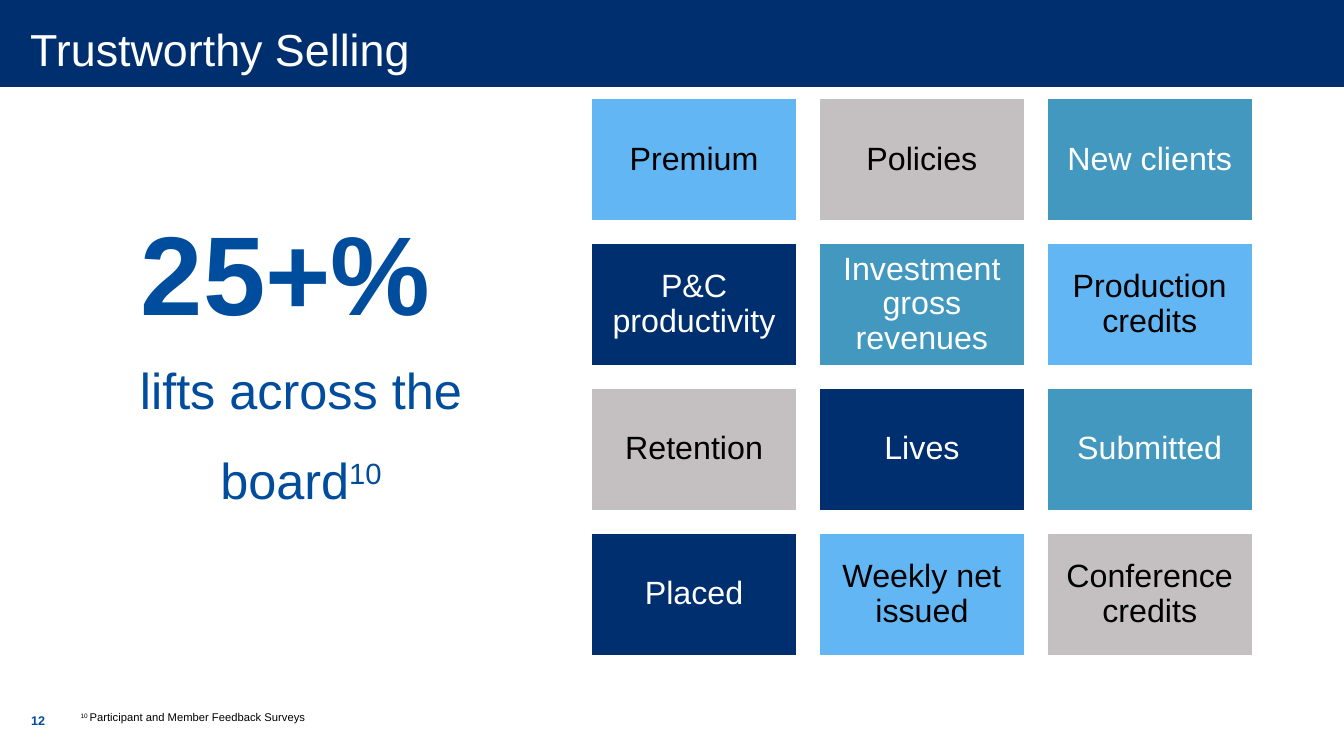
import pptx
import pptx.dml.color
import pptx.enum.shapes
import pptx.enum.text
import pptx.util

NAVY = pptx.dml.color.RGBColor(0x00, 0x2F, 0x70)
BLUE = pptx.dml.color.RGBColor(0x00, 0x4C, 0x9D)
SKY = pptx.dml.color.RGBColor(0x62, 0xB6, 0xF3)
TEAL = pptx.dml.color.RGBColor(0x42, 0x98, 0xBE)
GREY = pptx.dml.color.RGBColor(0xC4, 0xBF, 0xC0)
WHITE = pptx.dml.color.RGBColor(0xFF, 0xFF, 0xFF)
BLACK = pptx.dml.color.RGBColor(0x00, 0x00, 0x00)

CENTER = pptx.enum.text.PP_ALIGN.CENTER
MIDDLE = pptx.enum.text.MSO_ANCHOR.MIDDLE
INK = {NAVY: WHITE, TEAL: WHITE, SKY: BLACK, GREY: BLACK}

TILES = [
    [("Premium", SKY), ("Policies", GREY), ("New clients", TEAL)],
    [("P&C productivity", NAVY), ("Investment gross revenues", TEAL), ("Production credits", SKY)],
    [("Retention", GREY), ("Lives", NAVY), ("Submitted", TEAL)],
    [("Placed", NAVY), ("Weekly net issued", SKY), ("Conference credits", GREY)],
]


class Page:
    """Draws styled elements on one slide, placed in percent of its size."""

    def __init__(self, deck):
        self.width, self.height = deck.slide_width, deck.slide_height
        self.shapes = deck.slides.add_slide(deck.slide_layouts[6]).shapes
        self.font = "Arial"

    def place(self, left, top, width, height):
        return (int(left * self.width / 100), int(top * self.height / 100),
                int(width * self.width / 100), int(height * self.height / 100))

    def fill_text(self, box, spans, size, color, bold=False, frame=None, para=None):
        text = box.text_frame
        for name, value in {"word_wrap": True, **(frame or {})}.items():
            setattr(text, name, value)
        first = text.paragraphs[0]
        for name, value in (para or {}).items():
            setattr(first, name, value)
        look = {"name": self.font, "size": pptx.util.Pt(size), "bold": bold}
        for words, raised in spans:
            span = first.add_run()
            span.text = words
            for name, value in look.items():
                setattr(span.font, name, value)
            span.font.color.rgb = color
            if raised:
                span.font._element.set("baseline", "30000")

    def text(self, area, spans, size, color, **style):
        self.fill_text(self.shapes.add_textbox(*self.place(*area)), spans, size, color, **style)

    def block(self, area, fill, border=None):
        box = self.shapes.add_shape(pptx.enum.shapes.MSO_SHAPE.RECTANGLE, *self.place(*area))
        box.shadow.inherit = False
        box.fill.solid()
        box.fill.fore_color.rgb = fill
        if border is None:
            box.line.fill.background()
        else:
            box.line.color.rgb = border
            box.line.width = pptx.util.Pt(2)
        return box

    def tile(self, column, row, label, fill):
        area = (43.96 + 16.95 * column, 12.93 + 19.16 * row, 15.38, 16.4)
        inset = pptx.util.Inches(0.1)
        frame = {f"margin_{side}": inset for side in ("left", "top", "right", "bottom")}
        self.fill_text(self.block(area, fill, WHITE), [(label, False)], 23, INK[fill],
                       frame={**frame, "vertical_anchor": MIDDLE},
                       para={"alignment": CENTER, "line_spacing": 0.9})


def main():
    deck = pptx.Presentation()
    deck.slide_width = pptx.util.Inches(13.33)
    deck.slide_height = pptx.util.Inches(7.5)
    page = Page(deck)

    page.block((0, 0, 100, 11.5), NAVY)
    page.text((0, 0, 100, 12.93), [("Trustworthy Selling", False)], 32, WHITE,
              frame={"vertical_anchor": MIDDLE, "margin_left": pptx.util.Inches(0.3),
                     "margin_right": pptx.util.Inches(0.2), "margin_top": 0, "margin_bottom": 0})
    page.text((1.58, 92.67, 3.68, 5.33), [("12", False)], 9, BLUE, bold=True,
              frame={"vertical_anchor": MIDDLE})

    airy = {"alignment": CENTER, "line_spacing": 1.5}
    page.text((7.8, 17.33, 29.25, 32.67), [("25+% ", False)], 80, BLUE, bold=True, para=airy)
    page.text((6.53, 42.8, 31.73, 29.07), [("lifts across the board", False), ("10", True)],
              36, BLUE, para=airy)

    for row, tiles in enumerate(TILES):
        for column, (label, fill) in enumerate(tiles):
            page.tile(column, row, label, fill)

    page.text((5.25, 93.33, 19.43, 3.87),
              [("10 ", True), ("Participant and Member Feedback Surveys", False)], 8, BLACK)
    deck.save("out.pptx")


if __name__ == "__main__":
    main()
